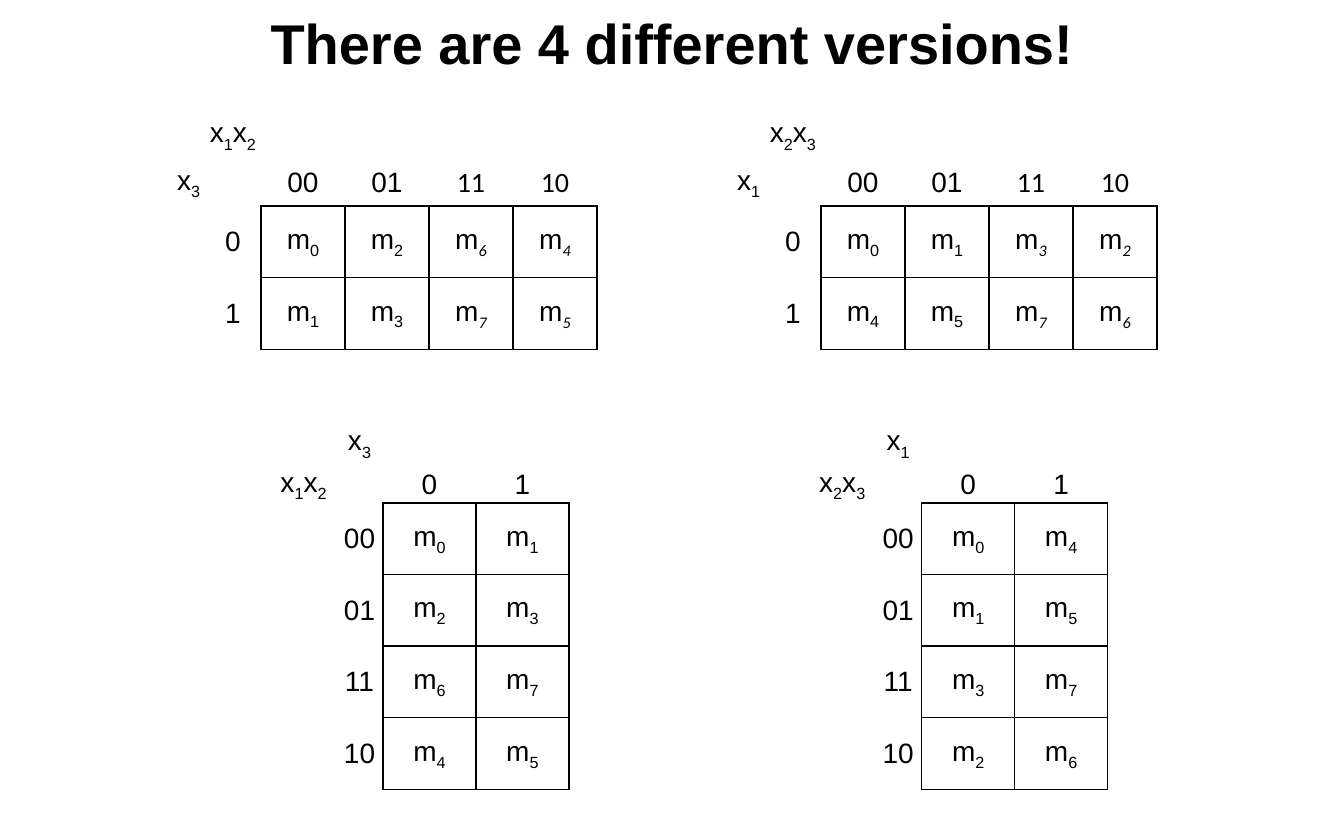
from itertools import groupby

from lxml.etree import SubElement
from pptx import Presentation
from pptx.dml.color import RGBColor
from pptx.enum.text import MSO_ANCHOR, PP_ALIGN
from pptx.oxml.ns import qn
from pptx.util import Inches, Pt

# Content
TITLE = "There are 4 different versions!"
GRAY_CODE = ["00", "01", "11", "10"]
BITS = ["0", "1"]
WIDE = {"columns": GRAY_CODE, "rows": BITS, "top": 1,
        "widths": [0.5, 0.5] + [0.75] * 4, "heights": [0.42, 0.42] + [0.64] * 2,
        "side_indent": 0.21, "alternate_from": 4}
TALL = {"columns": BITS, "rows": GRAY_CODE, "top": 3.75,
        "widths": [0.58, 0.42] + [0.83] * 2, "heights": [0.42, 0.3] + [0.64] * 4,
        "side_indent": 0, "alternate_from": 4}
# layout, left, variables across, variables down, minterm indices by row
MAPS = [
    (WIDE, 1.33, "x1x2", "x3", ["0264", "1375"]),
    (TALL, 2.42, "x3", "x1x2", ["01", "23", "67", "45"]),
    (WIDE, 6.33, "x2x3", "x1", ["0132", "4576"]),
    (TALL, 7.23, "x1", "x2x3", ["04", "15", "37", "26"]),
]
BLACK, WHITE = "000000", "FFFFFF"
HEADERS = 2  # header rows and header columns of every map


def color(hex_code):
    return RGBColor.from_string(hex_code)


def style_font(font, size):
    font.name = "Arial"
    font.size = Pt(size)
    font.color.rgb = color(BLACK)


def write_label(cell, label, alternate):
    """Write a code, or a term whose digits are subscripts."""
    paragraph = cell.text_frame.paragraphs[0]
    paragraph.alignment = PP_ALIGN.CENTER
    style_font(paragraph.font, 18)
    for is_letter, characters in groupby(label, str.isalpha):
        run = paragraph.add_run()
        run.text = "".join(characters)
        if is_letter:
            continue
        subscript = label[0].isalpha()
        if subscript:
            run._r.get_or_add_rPr().set("baseline", "-25000")
        if alternate:
            run.font.name = "Calibri"
            run.font.italic = subscript or None


def draw_borders(cell, row, column):
    in_grid = row >= HEADERS and column >= HEADERS
    above_grid = row == HEADERS - 1 and column >= HEADERS
    beside_grid = column == HEADERS - 1 and row >= HEADERS
    borders = {
        "L": (in_grid, 1),
        "R": (in_grid or beside_grid, 1),
        "T": (in_grid, 3 if row == 1 else 1),
        "B": (in_grid or above_grid, 3 if row == 0 else 1),
    }
    properties = cell._tc.get_or_add_tcPr()
    for side, (dark, width) in borders.items():
        line = SubElement(properties, qn(f"a:ln{side}"), w=str(Pt(width)))
        fill = SubElement(line, qn("a:solidFill"))
        SubElement(fill, qn("a:srgbClr"), val=BLACK if dark else WHITE)


def add_map(slide, layout, left, across, down, minterms):
    # Labels, row by row
    blanks = [""] * len(layout["columns"])
    labels = [["", across, *blanks], [down, "", *layout["columns"]]]
    for code, indices in zip(layout["rows"], minterms):
        labels.append(["", code, *("m" + index for index in indices)])

    # Table grid
    widths, heights = layout["widths"], layout["heights"]
    table = slide.shapes.add_table(
        len(heights), len(widths), Inches(left), Inches(layout["top"]),
        Inches(sum(widths)), Inches(sum(heights))).table
    table.first_row = table.horz_banding = False
    for column, width in zip(table.columns, widths):
        column.width = Inches(width)
    for row, height in zip(table.rows, heights):
        row.height = Inches(height)

    # Cells
    for r, row_labels in enumerate(labels):
        for c, label in enumerate(row_labels):
            cell = table.cell(r, c)
            cell.margin_left = cell.margin_right = 0
            cell.margin_top = cell.margin_bottom = 0
            cell.vertical_anchor = MSO_ANCHOR.MIDDLE
            draw_borders(cell, r, c)
            cell.fill.solid()
            cell.fill.fore_color.rgb = color(WHITE)
            write_label(cell, label, c >= layout["alternate_from"])
    table.cell(1, 0).margin_left = Inches(layout["side_indent"])


def main():
    presentation = Presentation()
    presentation.slide_width, presentation.slide_height = Inches(12), Inches(7.5)
    slide = presentation.slides.add_slide(presentation.slide_layouts[5])

    # Title
    title = slide.shapes.title
    title.left, title.top = Inches(1), Inches(0)
    title.width, title.height = Inches(10), Inches(0.75)
    title.text_frame.text = TITLE
    title.text_frame.vertical_anchor = MSO_ANCHOR.MIDDLE
    heading = title.text_frame.paragraphs[0]
    heading.alignment = PP_ALIGN.CENTER
    style_font(heading.font, 36)
    heading.font.bold = True

    # Karnaugh maps
    for karnaugh_map in MAPS:
        add_map(slide, *karnaugh_map)

    presentation.save("out.pptx")


if __name__ == "__main__":
    main()
